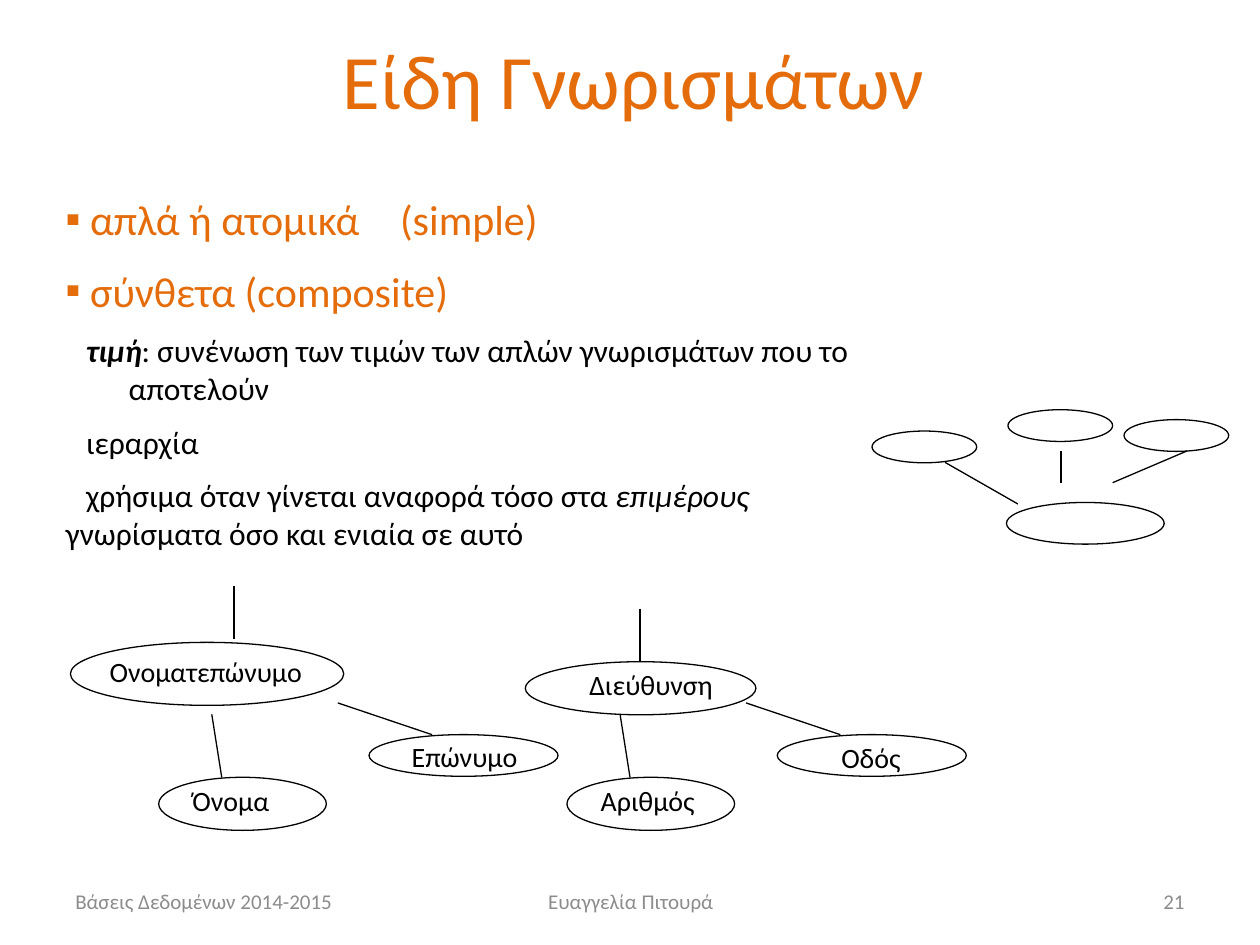
import pptx
import pptx.dml.color
import pptx.enum.shapes
import pptx.enum.text
import pptx.oxml.ns
import pptx.util
from lxml import etree

Cm = pptx.util.Cm
ALIGN = pptx.enum.text.PP_ALIGN
ANCHOR = pptx.enum.text.MSO_ANCHOR

# ---- Content (lengths in cm) ----
ORANGE, BLACK, GREY = "E46C0A", "000000", "8C8C8C"
TITLE = ("Είδη Γνωρισμάτων", (1.35, 0, 22.86, 3.18))
BODY_BOX = (1.07, 3.78, 16.71, 7.82)
KINDS = {"size": 24, "color": ORANGE, "bullet": "▪", "left": 0, "indent": 0}
HANGING = {"size": 18, "color": BLACK, "left": 1.27, "indent": -0.86}
FIRST_LINE = {"size": 18, "color": BLACK, "left": 0, "indent": 0.41}
BODY = [
    (KINDS | {"tab": 6.74}, [(" απλά ή ατομικά\t(simple)", {})]),
    (KINDS, [(" σύνθετα (composite)", {})]),
    (HANGING, [("τιμή", {"bold": True, "italic": True}),
               (": συνένωση των τιμών των απλών γνωρισμάτων που το αποτελούν", {})]),
    (FIRST_LINE, [("ιεραρχία", {})]),
    (FIRST_LINE, [("χρήσιμα όταν γίνεται αναφορά τόσο στα ", {}),
                  ("επιμέρους", {"italic": True}),
                  (" γνωρίσματα όσο και ενιαία σε αυτό", {})]),
]
FOOTER_TOP, FOOTER_HEIGHT = 17.65, 1.02
FOOTER = [
    ("Βάσεις Δεδομένων 2014-2015", 1.27, 5.92, ALIGN.LEFT),
    ("Ευαγγελία Πιτουρά", 8.69, 8.05, ALIGN.CENTER),
    ("21", 18.21, 5.92, ALIGN.RIGHT),
]

# Composite attributes: (label, ellipse box, label left, top, width)
ROOTS = [
    ("Ονοματεπώνυμο", (1.42, 12.95, 5.51, 1.27), (1.96, 13.08, 4.5)),
    ("Διεύθυνση", (10.59, 13.34, 4.65, 1.07), (11.63, 13.34, 3.81)),
]
STEMS = [(4.72, 11.81, 4.72, 12.88), (12.9, 12.27, 12.9, 13.34)]
TREE_STEP = 8.23
LOWER_PART, UPPER_PART = (3.2, 15.67, 3.38, 1.07), (7.44, 14.81, 3.81, 0.84)
PARTS = [
    [("Όνομα", LOWER_PART, (3.63, 15.67, 2.54)),
     ("Επώνυμο", UPPER_PART, (8.05, 14.78, 2.72))],
    [("Αριθμός", LOWER_PART, (3.63, 15.67, 2.54)),
     ("Οδός", UPPER_PART, (8.48, 14.81, 1.91))],
]
BRANCHES = [(4.27, 14.4, 4.47, 15.67), (6.81, 14.17, 8.71, 14.81)]
LABEL_HEIGHT = 0.94

# Unlabelled hierarchy
HIERARCHY_ROOT = (20.29, 10.13, 3.18, 0.84)
HIERARCHY_PARTS = [(17.58, 8.69), (20.32, 8.26), (22.66, 8.46)]
PART_SIZE = (2.11, 0.64)
HIERARCHY_LINES = [(19.05, 9.32, 20.52, 10.16), (21.39, 9.09, 21.39, 9.73),
                   (23.93, 9.09, 22.43, 9.73)]


# ---- Helpers ----
def rgb(code):
    return pptx.dml.color.RGBColor.from_string(code)


def assign(target, values):
    for key, value in values.items():
        setattr(target, key, value)


def lengths(values):
    return [Cm(value) for value in values]


def shifted(box, dx):
    return (box[0] + dx, *box[1:])


def write(paragraph, text, size, color, **extra):
    run = paragraph.add_run()
    run.text = text
    assign(run.font, {"name": "Calibri", "size": pptx.util.Pt(size)} | extra)
    run.font.color.rgb = rgb(color)


def text_box(shapes, text, box, size, color, align=ALIGN.LEFT, anchor=ANCHOR.TOP):
    frame = shapes.add_textbox(*lengths(box)).text_frame
    assign(frame, {"word_wrap": True, "vertical_anchor": anchor})
    frame.paragraphs[0].alignment = align
    write(frame.paragraphs[0], text, size, color)


def outline(shape):
    shape.line.color.rgb = rgb(BLACK)
    shape.line.width = pptx.util.Pt(0.75)


def ellipse(shapes, box):
    shape = shapes.add_shape(pptx.enum.shapes.MSO_SHAPE.OVAL, *lengths(box))
    shape.shadow.inherit = False
    shape.fill.background()
    outline(shape)


def line(shapes, ends):
    connector = shapes.add_connector(
        pptx.enum.shapes.MSO_CONNECTOR.STRAIGHT, *lengths(ends))
    outline(connector)
    etree.SubElement(connector._element.spPr, pptx.oxml.ns.qn("a:effectLst"))


def attribute(shapes, label, box, label_box, dx=0):
    group = shapes.add_group_shape().shapes
    ellipse(group, shifted(box, dx))
    text_box(group, label, (*shifted(label_box, dx), LABEL_HEIGHT), 16, BLACK)


def indent_and_bullet(paragraph, look):
    qn = pptx.oxml.ns.qn
    props = paragraph._p.get_or_add_pPr()
    for key, name in (("left", "marL"), ("indent", "indent")):
        props.set(name, str(int(Cm(look[key]))))
    if "bullet" in look:
        color = etree.SubElement(props, qn("a:buClr"))
        etree.SubElement(color, qn("a:srgbClr"), val=look["color"])
        etree.SubElement(props, qn("a:buFont"), typeface="Calibri")
        etree.SubElement(props, qn("a:buChar"), char=look["bullet"])
    else:
        etree.SubElement(props, qn("a:buNone"))
    if "tab" in look:
        stops = etree.SubElement(props, qn("a:tabLst"))
        etree.SubElement(stops, qn("a:tab"), pos=str(int(Cm(look["tab"]))), algn="l")


def place(placeholder, box, anchor):
    assign(placeholder, dict(zip(("left", "top", "width", "height"), lengths(box))))
    frame = placeholder.text_frame
    assign(frame, {"word_wrap": True, "vertical_anchor": anchor,
                   "auto_size": pptx.enum.text.MSO_AUTO_SIZE.NONE})
    return frame


def main():
    deck = pptx.Presentation()
    assign(deck, {"slide_width": Cm(25.4), "slide_height": Cm(19.05)})
    slide = deck.slides.add_slide(deck.slide_layouts[1])
    shapes = slide.shapes

    # Title
    heading, heading_box = TITLE
    title = place(shapes.title, heading_box, ANCHOR.MIDDLE).paragraphs[0]
    title.alignment = ALIGN.CENTER
    write(title, heading, 44, ORANGE)

    # Kinds of attributes
    body = place(slide.placeholders[1], BODY_BOX, ANCHOR.TOP)
    for index, (look, runs) in enumerate(BODY):
        paragraph = body.add_paragraph() if index else body.paragraphs[0]
        paragraph.space_before = pptx.util.Pt(look["size"] / 2 if index else 0)
        indent_and_bullet(paragraph, look)
        for text, emphasis in runs:
            write(paragraph, text, look["size"], look["color"], **emphasis)

    # Unlabelled hierarchy
    ellipse(shapes, HIERARCHY_ROOT)
    for corner in HIERARCHY_PARTS:
        ellipse(shapes, corner + PART_SIZE)
    for ends in HIERARCHY_LINES:
        line(shapes, ends)

    # Name and address trees
    for tree, (root, stem, parts) in enumerate(zip(ROOTS, STEMS, PARTS)):
        dx = tree * TREE_STEP
        attribute(shapes, *root)
        line(shapes, stem)
        for part in parts:
            attribute(shapes, *part, dx)
        for x1, y1, x2, y2 in BRANCHES:
            line(shapes, (x1 + dx, y1, x2 + dx, y2))

    # Footer
    for text, left, width, align in FOOTER:
        text_box(shapes, text, (left, FOOTER_TOP, width, FOOTER_HEIGHT), 12, GREY,
                 align, ANCHOR.MIDDLE)

    deck.save("out.pptx")


if __name__ == "__main__":
    main()
